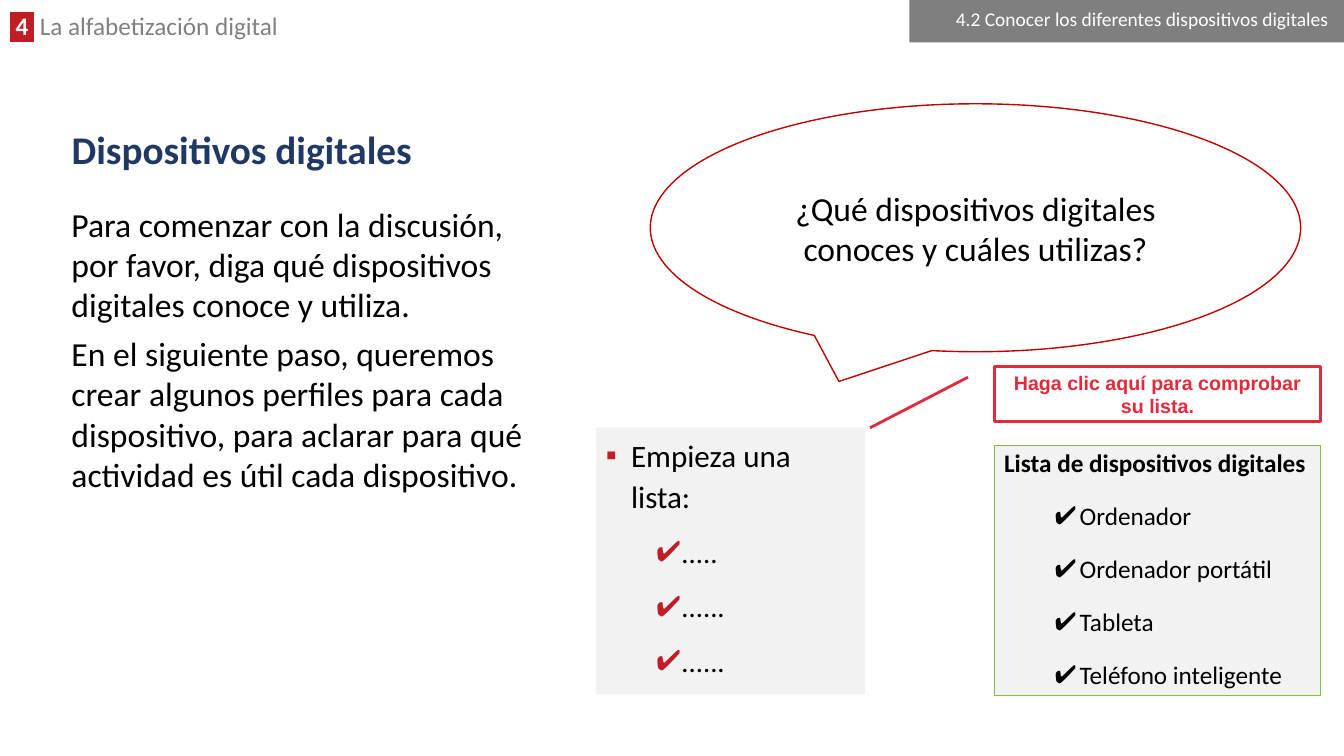
"""Build the slide on digital devices with its question, list and answer box."""
from lxml.etree import SubElement
from pptx import Presentation
from pptx.dml.color import RGBColor
from pptx.enum.shapes import MSO_SHAPE
from pptx.enum.text import MSO_ANCHOR, MSO_AUTO_SIZE, PP_ALIGN
from pptx.oxml.ns import qn
from pptx.util import Inches, Pt
from dataclasses import dataclass


@dataclass(frozen=True)
class Theme:
    red: str = "C01E24"
    outline_red: str = "C00000"
    alert: str = "E12A3C"
    navy: str = "203864"
    gray: str = "7F7F7F"
    label_gray: str = "808080"
    pale: str = "F2F2F2"
    green: str = "80C141"
    white: str = "FFFFFF"
    black: str = "000000"
    font: str = "Calibri"
    alert_font: str = "Arial"
    title_size: float = 28
    body_size: float = 24
    start_size: float = 22.2
    entry_size: float = 20.4
    label_size: float = 18
    alert_size: float = 14
    section_size: float = 13.9


THEME = Theme()
WIDTH, HEIGHT = Inches(13.33), Inches(7.5)

CHAPTER = (" 4 ", " La alfabetización digital")
SECTION = "4.2 Conocer los diferentes dispositivos digitales"
TITLE = "Dispositivos digitales"
INTRODUCTION = [
    "Para comenzar con la discusión, por favor, diga qué dispositivos digitales conoce y utiliza.",
    "En el siguiente paso, queremos crear algunos perfiles para cada dispositivo, "
    "para aclarar para qué actividad es útil cada dispositivo.",
]
QUESTION = "¿Qué dispositivos digitales conoces y cuáles utilizas?"
START = "Empieza una lista:"
BLANKS = [".....", "......", "......"]
CHECK = "Haga clic aquí para comprobar su lista."
ANSWER = "Lista de dispositivos digitales"
DEVICES = ["Ordenador", "Ordenador portátil", "Tableta", "Teléfono inteligente"]

ANSWER_LEFT, ANSWER_WIDTH = 73.97, 24.31
PLACES = {
    "chapter": (0, 1.47, 42.84, 4.53),
    "title": (4.58, 15.73, 90.77, 8.8),
    "introduction": (4.58, 26.27, 37.51, 70.93),
    "section": (67.67, 0, 32.33, 5.6),
    "start": (44.34, 56.53, 20.03, 35.33),
    "question": (48.39, 13.73, 48.39, 32.8),
    "answer": (ANSWER_LEFT, 58.93, ANSWER_WIDTH, 33.07),
    "check": (ANSWER_LEFT, 48.53, ANSWER_WIDTH, 7.2),
}


def place(part):
    """Turn percentages of the slide into lengths."""
    return [int(share * side / 100) for share, side in zip(PLACES[part], (WIDTH, HEIGHT) * 2)]


def assign(target, values):
    for name, value in values.items():
        setattr(target, name, value)


def prepare(holder, anchor=MSO_ANCHOR.TOP):
    frame = holder.text_frame
    assign(frame, dict(
        word_wrap=True, auto_size=MSO_AUTO_SIZE.NONE, vertical_anchor=anchor,
        margin_left=Inches(0.1), margin_right=Inches(0.1),
        margin_top=Inches(0.05), margin_bottom=Inches(0.05)))
    return frame


def add_box(part, preset, fill, line=None, weight=1, anchor=MSO_ANCHOR.MIDDLE):
    box = slide.shapes.add_shape(preset, *place(part))
    box.shadow.inherit = False
    box.fill.solid()
    box.fill.fore_color.rgb = RGBColor.from_string(fill)
    if line:
        box.line.color.rgb = RGBColor.from_string(line)
        box.line.width = Pt(weight)
    else:
        box.line.fill.background()
    prepare(box, anchor)
    return box


def write(paragraph, words, size, color=THEME.black, bold=False, font=THEME.font, **layout):
    assign(paragraph, {"alignment": PP_ALIGN.LEFT, "space_before": Pt(0), **layout})
    run = paragraph.add_run()
    run.text = words
    assign(run.font, dict(size=Pt(size), bold=bold, name=font))
    run.font.color.rgb = RGBColor.from_string(color)
    return run


def set_bullet(paragraph, mark, color, indent):
    properties = paragraph._p.get_or_add_pPr()
    properties.set("marL", str(Inches(indent)))
    properties.set("indent", str(Inches(-0.25)))
    tint = SubElement(properties, qn("a:buClr"))
    SubElement(tint, qn("a:srgbClr"), val=color)
    SubElement(properties, qn("a:buFont"), typeface=THEME.alert_font)
    SubElement(properties, qn("a:buChar"), char=mark)


def add_checklist(frame, entries, size, color, spacing):
    for entry in entries:
        paragraph = frame.add_paragraph()
        set_bullet(paragraph, "✔", color, 0.75)
        write(paragraph, entry, size, level=1, line_spacing=spacing, space_before=Pt(12))


def highlight(run, color):
    mark = SubElement(run.font._element, qn("a:highlight"))
    SubElement(mark, qn("a:srgbClr"), val=color)
    run.font.fill._xPr.find(qn("a:solidFill")).addnext(mark)


presentation = Presentation()
assign(presentation, dict(slide_width=WIDTH, slide_height=HEIGHT))
slide = presentation.slides.add_slide(presentation.slide_layouts[5])

title = slide.shapes.title
assign(title, dict(zip(("left", "top", "width", "height"), place("title"))))
write(prepare(title, MSO_ANCHOR.MIDDLE).paragraphs[0], TITLE, THEME.title_size,
      THEME.navy, True, line_spacing=0.9)

chapter = prepare(slide.shapes.add_textbox(*place("chapter"))).paragraphs[0]
number, name = CHAPTER
highlight(write(chapter, number, THEME.label_size, THEME.white, True, line_spacing=0.8), THEME.red)
write(chapter, name, THEME.label_size, THEME.label_gray, line_spacing=0.8)

introduction = prepare(slide.shapes.add_textbox(*place("introduction")))
first, second = INTRODUCTION
write(introduction.paragraphs[0], first, THEME.body_size)
write(introduction.add_paragraph(), second, THEME.body_size, space_before=Pt(6), space_after=Pt(6))

section = add_box("section", MSO_SHAPE.RECTANGLE, THEME.gray).text_frame
section.margin_right = Inches(0.15)
write(section.paragraphs[0], SECTION, THEME.section_size, THEME.white,
      alignment=PP_ALIGN.RIGHT, line_spacing=0.7)

start = add_box("start", MSO_SHAPE.RECTANGLE, THEME.pale, anchor=MSO_ANCHOR.TOP).text_frame
set_bullet(start.paragraphs[0], "▪", THEME.red, 0.25)
write(start.paragraphs[0], START, THEME.start_size, line_spacing=1.1)
add_checklist(start, BLANKS, THEME.entry_size, THEME.red, 1.1)

question = add_box("question", MSO_SHAPE.OVAL_CALLOUT, THEME.white, THEME.outline_red)
question.adjustments[0], question.adjustments[1] = -0.21, 0.62
write(question.text_frame.paragraphs[0], QUESTION, THEME.body_size, alignment=PP_ALIGN.CENTER)

answer = add_box("answer", MSO_SHAPE.RECTANGLE, THEME.pale, THEME.green, 0.75,
                 MSO_ANCHOR.TOP).text_frame
write(answer.paragraphs[0], ANSWER, THEME.label_size, bold=True, line_spacing=0.9)
add_checklist(answer, DEVICES, THEME.label_size, THEME.black, 1.2)

check = add_box("check", MSO_SHAPE.LINE_CALLOUT_1, THEME.white, THEME.alert, 2)
for corner, share in enumerate((0.19, -0.08, 1.12, -0.38)):
    check.adjustments[corner] = share
write(check.text_frame.paragraphs[0], CHECK, THEME.alert_size, THEME.alert, True,
      THEME.alert_font, alignment=PP_ALIGN.CENTER)

presentation.save("out.pptx")
